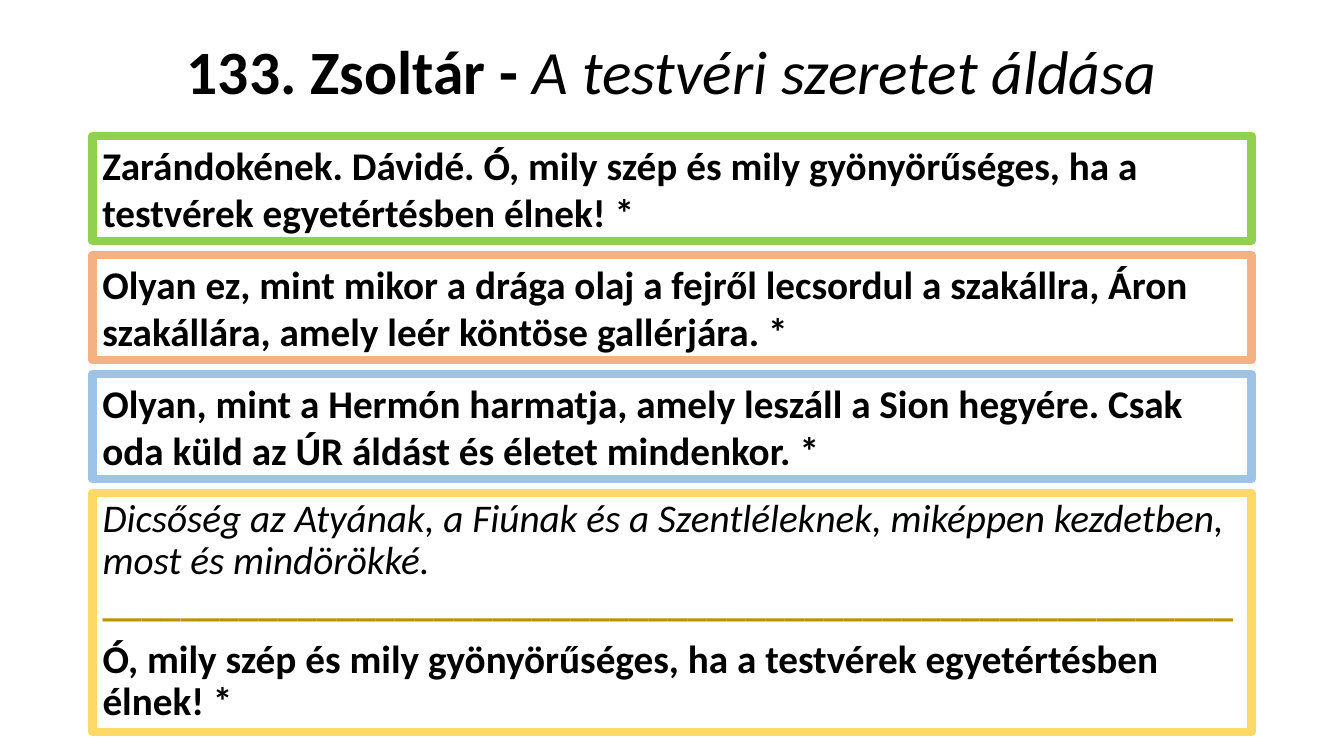
import dataclasses
import typing

import lxml.etree
import pptx
import pptx.dml.color
import pptx.enum.text
import pptx.oxml.ns
import pptx.util

Cm = pptx.util.Cm
Pt = pptx.util.Pt

COLORS = {
    "text": "000000",
    "rule": "BF9000",
    "green": "92D050",
    "orange": "F4B183",
    "blue": "9DC3E6",
    "yellow": "FFD966",
}
LEFT, WIDTH = 2.33, 29.21
FIRST_TOP, STEP = 3.43, 3.0
VERSE_HEIGHT, DOXOLOGY_HEIGHT = 2.64, 6.02


@dataclasses.dataclass(frozen=True)
class Verse:
    text: str
    color: str


VERSES = [
    Verse("Zarándokének. Dávidé. Ó, mily szép és mily gyönyörűséges, "
          "ha a testvérek egyetértésben élnek! *", "green"),
    Verse("Olyan ez, mint mikor a drága olaj a fejről lecsordul a szakállra, "
          "Áron szakállára, amely leér köntöse gallérjára. *", "orange"),
    Verse("Olyan, mint a Hermón harmatja, amely leszáll a Sion hegyére. "
          "Csak oda küld az ÚR áldást és életet mindenkor. *", "blue"),
]


def rgb(name: str) -> pptx.dml.color.RGBColor:
    return pptx.dml.color.RGBColor.from_string(COLORS[name])


def add_span(para: typing.Any, text: str, *, size: float = 28, bold: bool = False,
             italic: bool = False, color: str = "text") -> None:
    span = para.add_run()
    span.text = text
    span.font.name = "Calibri"
    span.font.size = Pt(size)
    span.font.bold = bold
    span.font.italic = italic
    span.font.color.rgb = rgb(color)


def place(box: typing.Any, top: float, height: float) -> None:
    box.left, box.top = Cm(LEFT), Cm(top)
    box.width, box.height = Cm(WIDTH), Cm(height)


def frame(box: typing.Any, color: str) -> None:
    box.line.color.rgb = rgb(color)
    box.line.width = Pt(6)


def format_plain(para: typing.Any) -> None:
    """Remove the list bullet and indent, and tighten the lines."""
    para.line_spacing = 0.9
    para.space_before = Pt(10)
    properties = para._p.get_or_add_pPr()
    properties.set("marL", "0")
    properties.set("indent", "0")
    lxml.etree.SubElement(properties, pptx.oxml.ns.qn("a:buNone"))


def add_verse(page: typing.Any, verse: Verse, top: float) -> None:
    box = page.shapes.add_textbox(Cm(LEFT), Cm(top), Cm(WIDTH), Cm(VERSE_HEIGHT))
    box.text_frame.word_wrap = True
    box.text_frame.auto_size = pptx.enum.text.MSO_AUTO_SIZE.SHAPE_TO_FIT_TEXT
    frame(box, verse.color)
    add_span(box.text_frame.paragraphs[0], verse.text, bold=True)


def fill_title(title: typing.Any) -> None:
    place(title, 0.05, 3.68)
    title.text_frame.auto_size = pptx.enum.text.MSO_AUTO_SIZE.NONE
    title.text_frame.vertical_anchor = pptx.enum.text.MSO_ANCHOR.MIDDLE
    para = title.text_frame.paragraphs[0]
    para.alignment = pptx.enum.text.PP_ALIGN.CENTER
    para.line_spacing = 0.9
    add_span(para, "133. Zsoltár - ", size=44, bold=True)
    add_span(para, "A testvéri szeretet áldása", size=44, italic=True)


def fill_doxology(body: typing.Any) -> None:
    place(body, FIRST_TOP + len(VERSES) * STEP, DOXOLOGY_HEIGHT)
    frame(body, "yellow")
    body.text_frame.auto_size = pptx.enum.text.MSO_AUTO_SIZE.NONE
    praise = body.text_frame.paragraphs[0]
    format_plain(praise)
    add_span(praise, "Dicsőség az Atyának, a Fiúnak és a Szentléleknek, "
             "miképpen kezdetben, most és mindörökké.", italic=True)
    praise.add_line_break()
    add_span(praise, "_" * 58, bold=True, color="rule")
    refrain = body.text_frame.add_paragraph()
    format_plain(refrain)
    add_span(refrain, "Ó, mily szép és mily gyönyörűséges, "
             "ha a testvérek egyetértésben élnek! *", bold=True)


def main() -> None:
    deck = pptx.Presentation()
    deck.slide_width, deck.slide_height = Cm(33.87), Cm(19.05)
    page = deck.slides.add_slide(deck.slide_layouts[1])

    # Title and closing doxology
    fill_title(page.shapes.title)
    fill_doxology(page.placeholders[1])

    # Framed verses
    for index, verse in enumerate(VERSES):
        add_verse(page, verse, FIRST_TOP + index * STEP)

    deck.save("out.pptx")


if __name__ == "__main__":
    main()
